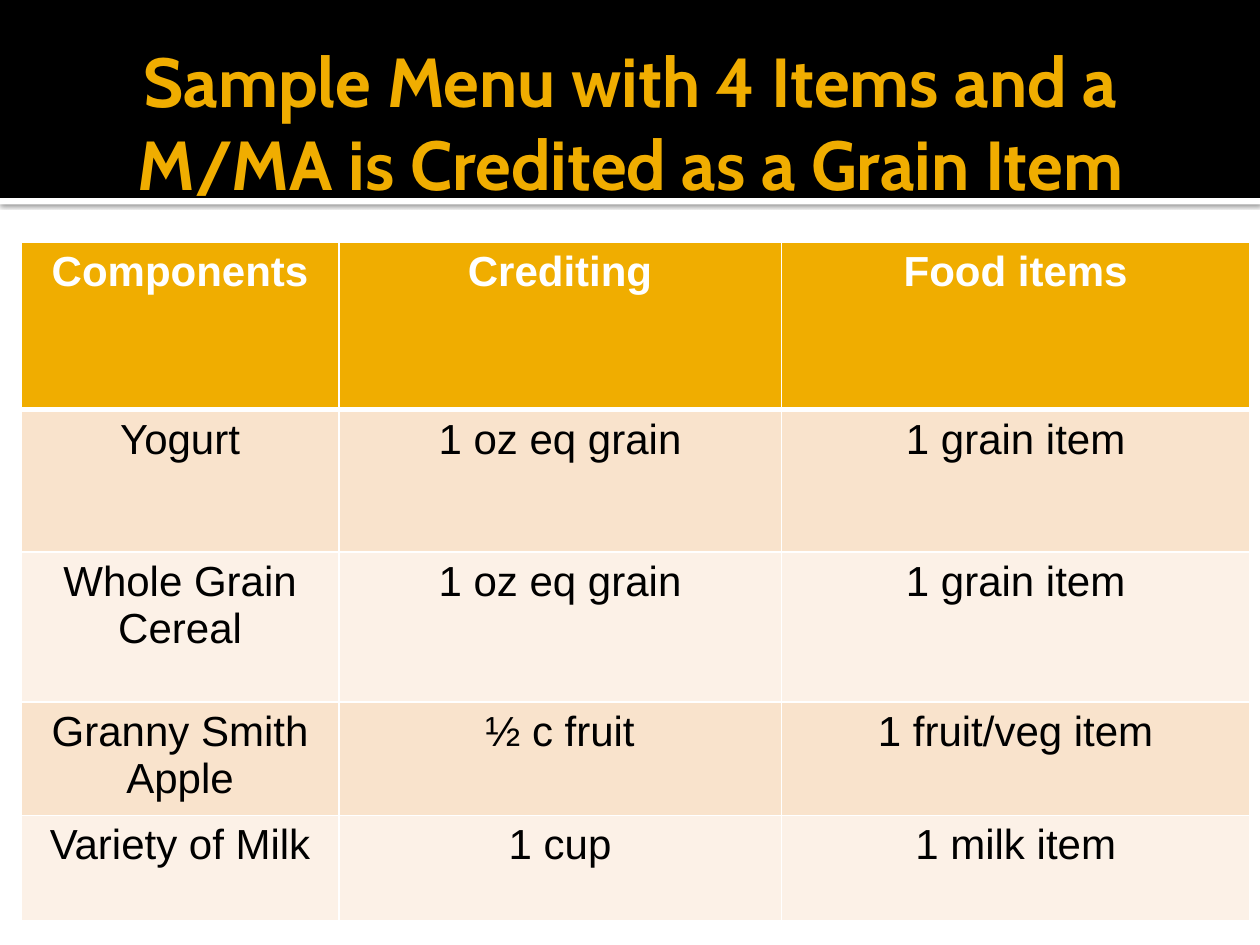
"""Build a slide with a sample menu table under a title banner."""
from dataclasses import dataclass

from lxml import etree
from pptx import Presentation
from pptx.dml.color import RGBColor
from pptx.enum.shapes import MSO_SHAPE
from pptx.enum.text import MSO_ANCHOR, PP_ALIGN
from pptx.oxml.ns import qn
from pptx.util import Cm, Pt

RECT = MSO_SHAPE.RECTANGLE
MID = MSO_ANCHOR.MIDDLE
CENTER = PP_ALIGN.CENTER

TITLE = "Sample Menu with 4 Items and a\vM/MA is Credited as a Grain Item"
MENU = [
    ("Components", "Crediting", "Food items"),
    ("Yogurt", "1 oz eq grain", "1 grain item"),
    ("Whole Grain Cereal", "1 oz eq grain", "1 grain item"),
    ("Granny Smith Apple", "½ c fruit", "1 fruit/veg item"),
    ("Variety of Milk", "1 cup", "1 milk item"),
]
WIDTHS = (6.4, 8.92, 9.45)
HEIGHTS = (3.38, 2.87, 3.02, 2.13, 2.13)
PAGE = (25.4, 19.05)
BANNER = 3.99
LEFT = 0.43


@dataclass(frozen=True)
class Theme:
    """Colours, fonts and type sizes."""
    gold: str = "F0AD00"
    white: str = "FFFFFF"
    black: str = "000000"
    bands: tuple = ("F9E3CC", "FCF1E7")
    head: str = "Cabin"
    body: str = "Arial"
    big: float = 39.6
    small: float = 24


THEME = Theme()


def paint(item, color):
    """Give a shape or cell a solid fill."""
    item.fill.solid()
    item.fill.fore_color.rgb = RGBColor.from_string(color)


def style(para, face, size, color, bold):
    """Centre a paragraph and set its font."""
    para.alignment = CENTER
    font = para.font
    font.name, font.size, font.bold = face, Pt(size), bold
    font.color.rgb = RGBColor.from_string(color)


def add_bar(slide, top, height, color):
    """Add a full-width bar without a line or shadow."""
    bar = slide.shapes.add_shape(RECT, 0, Cm(top), Cm(PAGE[0]), Cm(height))
    bar.shadow.inherit = False
    bar.line.fill.background()
    paint(bar, color)
    return bar


def add_shade(bar):
    """Cast a soft shadow straight down from a bar."""
    effect = bar._element.spPr.find(qn("a:effectLst"))
    shade = etree.SubElement(effect, qn("a:outerShdw"), blurRad=str(Pt(2.5)),
                             dist=str(Pt(0.8)), dir="5400000", rotWithShape="0")
    color = etree.SubElement(shade, qn("a:srgbClr"), val=THEME.black)
    etree.SubElement(color, qn("a:alpha"), val="60000")


def add_edges(cell, base):
    """Draw white cell borders, with the given bottom width."""
    props = cell._tc.get_or_add_tcPr()
    for side, width in zip("LRTB", (1, 1, 1, base)):
        line = etree.SubElement(props, qn(f"a:ln{side}"), w=str(Pt(width)))
        fill = etree.SubElement(line, qn("a:solidFill"))
        etree.SubElement(fill, qn("a:srgbClr"), val=THEME.white)


def add_title(slide):
    """Place the title on the banner."""
    box = slide.shapes.add_textbox(Cm(LEFT), Cm(1.07), Cm(24.56), Cm(2.74))
    frame = box.text_frame
    frame.word_wrap = True
    frame.vertical_anchor = MID
    frame.text = TITLE
    style(frame.paragraphs[0], THEME.head, THEME.big, THEME.gold, True)


def add_menu(slide):
    """Fill the menu table, header first and then banded rows."""
    table = slide.shapes.add_table(
        len(MENU), len(WIDTHS), Cm(LEFT), Cm(4.88),
        Cm(sum(WIDTHS)), Cm(sum(HEIGHTS))).table
    for col, width in zip(table.columns, WIDTHS):
        col.width = Cm(width)
    for i, (row, height, texts) in enumerate(zip(table.rows, HEIGHTS, MENU)):
        row.height = Cm(height)
        top = i == 0
        back = THEME.gold if top else THEME.bands[(i - 1) % 2]
        ink = THEME.white if top else THEME.black
        for cell, text in zip(row.cells, texts):
            cell.text = text
            style(cell.text_frame.paragraphs[0], THEME.body, THEME.small, ink, top)
            add_edges(cell, 3 if top else 1)
            paint(cell, back)


def main():
    """Build and save the slide."""
    deck = Presentation()
    deck.slide_width, deck.slide_height = map(Cm, PAGE)
    slide = deck.slides.add_slide(deck.slide_layouts[6])
    add_shade(add_bar(slide, BANNER, 0.13, THEME.white))
    add_bar(slide, 0, BANNER, THEME.black)
    add_title(slide)
    add_menu(slide)
    deck.save("out.pptx")


if __name__ == "__main__":
    main()
